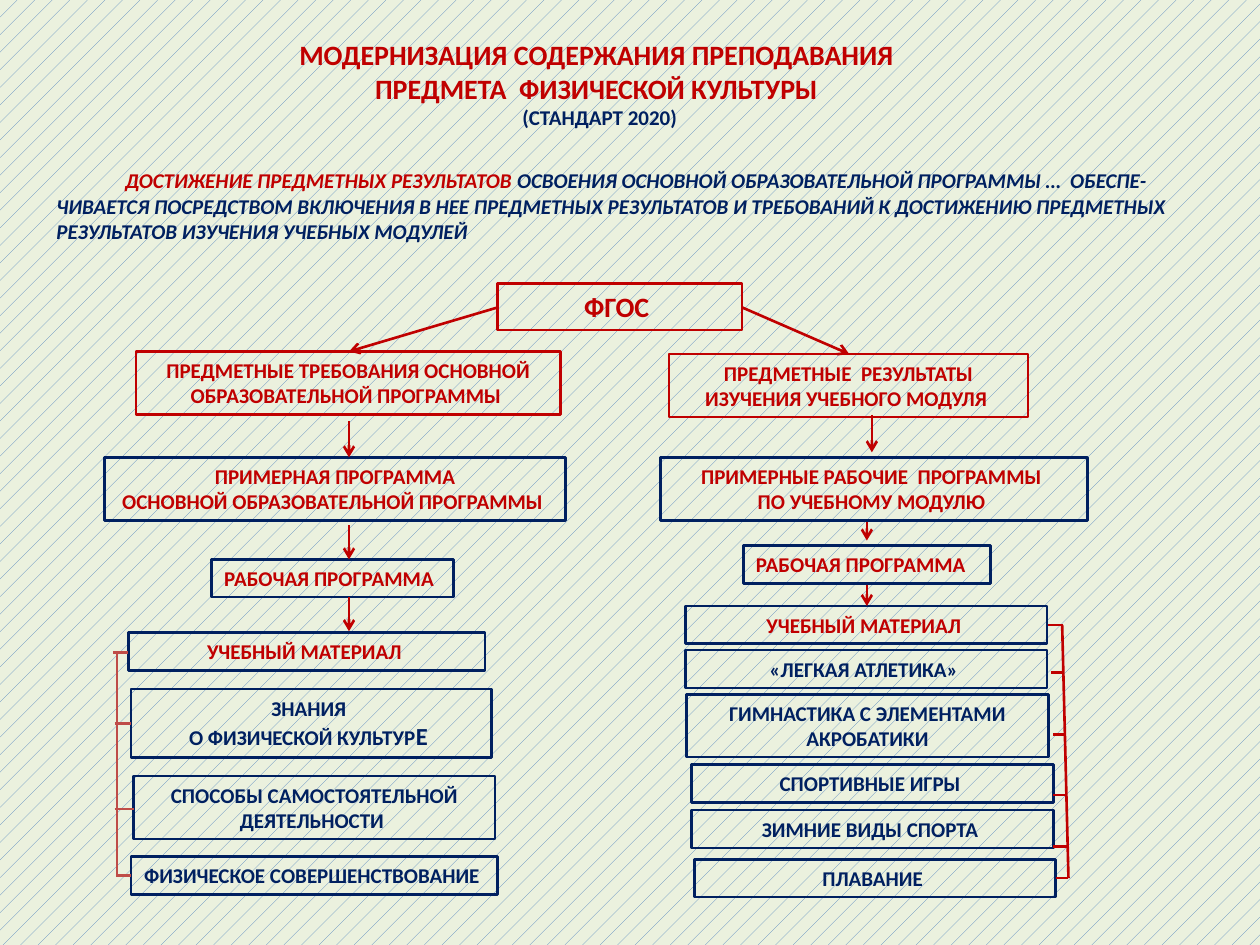
from lxml import etree
from pptx import Presentation
from pptx.dml.color import RGBColor
from pptx.enum.dml import MSO_PATTERN
from pptx.enum.shapes import MSO_CONNECTOR, MSO_SHAPE
from pptx.enum.text import MSO_ANCHOR, MSO_AUTO_SIZE, PP_ALIGN
from pptx.oxml.ns import qn
from pptx.util import Inches, Pt

RED = RGBColor(0xC0, 0x00, 0x00)
NAVY = RGBColor(0x00, 0x20, 0x60)
BRICK = RGBColor(0xBF, 0x4C, 0x48)
BLUE = RGBColor(0x4F, 0x81, 0xBD)
PALE_GREEN = RGBColor(0xEB, 0xF1, 0xDE)

RECTANGLE = MSO_SHAPE.RECTANGLE
STRAIGHT = MSO_CONNECTOR.STRAIGHT
DOTS = MSO_PATTERN.PERCENT_5
TOP = MSO_ANCHOR.TOP
GROW = MSO_AUTO_SIZE.SHAPE_TO_FIT_TEXT
CENTER = PP_ALIGN.CENTER
LEFT = PP_ALIGN.LEFT


class Board:
    font_name = "Calibri"
    line_width = Pt(1.5)

    def __init__(self, slide):
        self.slide = slide

    def background(self, fore, back):
        fill = self.slide.background.fill
        fill.patterned()
        fill.pattern = DOTS
        fill.fore_color.rgb = fore
        fill.back_color.rgb = back

    def format_run(self, run, size, color, bold=True, italic=False):
        run.font.name = self.font_name
        run.font.size = Pt(size)
        run.font.bold = bold
        run.font.italic = italic
        run.font.color.rgb = color

    def prepare(self, frame):
        frame.word_wrap = True
        frame.auto_size = GROW
        frame.vertical_anchor = TOP

    def title(self, left, top, width, height, lines):
        heading = self.slide.shapes.title
        heading.left, heading.top = Inches(left), Inches(top)
        heading.width, heading.height = Inches(width), Inches(height)
        frame = heading.text_frame
        frame.text = "\n".join(text for text, _, _ in lines)
        self.prepare(frame)
        for paragraph, (_, size, color) in zip(frame.paragraphs, lines):
            paragraph.alignment = CENTER
            self.format_run(paragraph.runs[0], size, color)

    def statement(self, left, top, width, height, first_indent, parts):
        area = self.slide.shapes.add_textbox(
            Inches(left), Inches(top), Inches(width), Inches(height))
        self.prepare(area.text_frame)
        paragraph = area.text_frame.paragraphs[0]
        paragraph._p.get_or_add_pPr().set("indent", str(Inches(first_indent)))
        for text, size, color, strong in parts:
            run = paragraph.add_run()
            run.text = text
            self.format_run(run, size, color, strong, strong)

    def box(self, left, top, width, height, text, color, outline=NAVY,
            size=12, align=CENTER):
        block = self.slide.shapes.add_shape(
            RECTANGLE, Inches(left), Inches(top), Inches(width), Inches(height))
        block.shadow.inherit = False
        block.fill.background()
        block.line.color.rgb = outline
        block.line.width = self.line_width
        frame = block.text_frame
        frame.text = text
        self.prepare(frame)
        for paragraph in frame.paragraphs:
            paragraph.alignment = align
            self.format_run(paragraph.runs[0], size, color)
        return frame

    def line(self, x1, y1, x2, y2, color=RED, arrow=False):
        link = self.slide.shapes.add_connector(
            STRAIGHT, Inches(x1), Inches(y1), Inches(x2), Inches(y2))
        link.line.color.rgb = color
        link.line.width = self.line_width
        if arrow:
            etree.SubElement(link.line._ln, qn("a:tailEnd"), type="arrow")
        etree.SubElement(link._element.spPr, qn("a:effectLst"))


def main():
    deck = Presentation()
    deck.slide_width, deck.slide_height = Inches(10), Inches(7.5)
    board = Board(deck.slides.add_slide(deck.slide_layouts[5]))
    board.background(BLUE, PALE_GREEN)

    board.title(2.01, 0.25, 5.5, 0.84, [
        ("МОДЕРНИЗАЦИЯ СОДЕРЖАНИЯ ПРЕПОДАВАНИЯ ", 16, RED),
        ("ПРЕДМЕТА  ФИЗИЧЕСКОЙ КУЛЬТУРЫ ", 16, RED),
        ("(СТАНДАРТ 2020)", 12, NAVY),
    ])
    board.statement(0.35, 1.25, 9.13, 0.74, 0.5, [
        (" ", 14, RED, False),
        ("ДОСТИЖЕНИЕ ПРЕДМЕТНЫХ РЕЗУЛЬТАТОВ ", 12, RED, True),
        ("ОСВОЕНИЯ ОСНОВНОЙ ОБРАЗОВАТЕЛЬНОЙ ПРОГРАММЫ …  ОБЕСПЕ-ЧИВАЕТСЯ "
         "ПОСРЕДСТВОМ ВКЛЮЧЕНИЯ В НЕЕ ПРЕДМЕТНЫХ РЕЗУЛЬТАТОВ И ТРЕБОВАНИЙ "
         "К ДОСТИЖЕНИЮ ПРЕДМЕТНЫХ РЕЗУЛЬТАТОВ ИЗУЧЕНИЯ УЧЕБНЫХ МОДУЛЕЙ",
         12, NAVY, True),
    ])

    board.box(3.95, 2.25, 1.94, 0.37, "ФГОС ", RED, RED, size=16)
    board.box(1.08, 2.79, 3.37, 0.5,
              "ПРЕДМЕТНЫЕ ТРЕБОВАНИЯ ОСНОВНОЙ ОБРАЗОВАТЕЛЬНОЙ ПРОГРАММЫ ",
              RED, RED)
    board.box(5.31, 2.81, 2.85, 0.5,
              "ПРЕДМЕТНЫЕ  РЕЗУЛЬТАТЫ ИЗУЧЕНИЯ УЧЕБНОГО МОДУЛЯ ", RED, RED)
    board.box(0.83, 3.63, 3.66, 0.5,
              "ПРИМЕРНАЯ ПРОГРАММА\nОСНОВНОЙ ОБРАЗОВАТЕЛЬНОЙ ПРОГРАММЫ ", RED)
    board.box(5.24, 3.63, 3.39, 0.5,
              "ПРИМЕРНЫЕ РАБОЧИЕ  ПРОГРАММЫ \nПО УЧЕБНОМУ МОДУЛЮ ", RED)
    for left, top, width in [(1.68, 4.44, 1.92), (5.9, 4.33, 1.96)]:
        board.box(left, top, width, 0.3, "РАБОЧАЯ ПРОГРАММА", RED, align=LEFT)

    board.box(1.02, 5.02, 2.83, 0.3, "УЧЕБНЫЙ МАТЕРИАЛ ", RED)
    knowledge = board.box(1.04, 5.47, 2.86, 0.54,
                          "ЗНАНИЯ \nО ФИЗИЧЕСКОЙ КУЛЬТУР", NAVY)
    ending = knowledge.paragraphs[1].add_run()
    ending.text = "Е "
    board.format_run(ending, 14, NAVY)
    board.box(1.06, 6.16, 2.87, 0.5,
              "СПОСОБЫ САМОСТОЯТЕЛЬНОЙ ДЕЯТЕЛЬНОСТИ ", NAVY)
    board.box(1.04, 6.8, 2.91, 0.3, "ФИЗИЧЕСКОЕ СОВЕРШЕНСТВОВАНИЕ ", NAVY)

    for left, top, height, topic, color in [
        (5.44, 4.81, 0.3, "УЧЕБНЫЙ МАТЕРИАЛ ", RED),
        (5.44, 5.16, 0.3, "«ЛЕГКАЯ АТЛЕТИКА» ", NAVY),
        (5.45, 5.51, 0.5, "ГИМНАСТИКА С ЭЛЕМЕНТАМИ АКРОБАТИКИ", NAVY),
        (5.49, 6.07, 0.3, "СПОРТИВНЫЕ ИГРЫ ", NAVY),
        (5.49, 6.43, 0.3, "ЗИМНИЕ ВИДЫ СПОРТА ", NAVY),
        (5.51, 6.82, 0.3, "ПЛАВАНИЕ ", NAVY),
    ]:
        board.box(left, top, 2.87, height, topic, color)

    board.line(3.95, 2.44, 2.77, 2.79, arrow=True)
    board.line(5.89, 2.44, 6.74, 2.81, arrow=True)
    for x, start, end in [
        (2.77, 3.34, 3.63), (2.77, 4.17, 4.44), (2.77, 4.74, 5.01),
        (6.92, 3.29, 3.59), (6.88, 4.14, 4.29), (6.88, 4.64, 4.81),
    ]:
        board.line(x, start, x, end, arrow=True)

    board.line(0.93, 5.18, 0.93, 6.96, BRICK)
    for y, start, end in [(5.18, 0.9, 1.02), (5.74, 0.91, 1.04),
                          (6.42, 0.91, 1.06), (6.95, 0.94, 1.04)]:
        board.line(start, y, end, y, BRICK)

    board.line(8.43, 4.96, 8.48, 6.97)
    for y, start, end in [(4.96, 8.32, 8.44), (5.34, 8.34, 8.44),
                          (5.83, 8.36, 8.46), (6.31, 8.36, 8.47),
                          (6.72, 8.36, 8.48), (6.97, 8.38, 8.48)]:
        board.line(start, y, end, y)

    deck.save("out.pptx")


if __name__ == "__main__":
    main()
